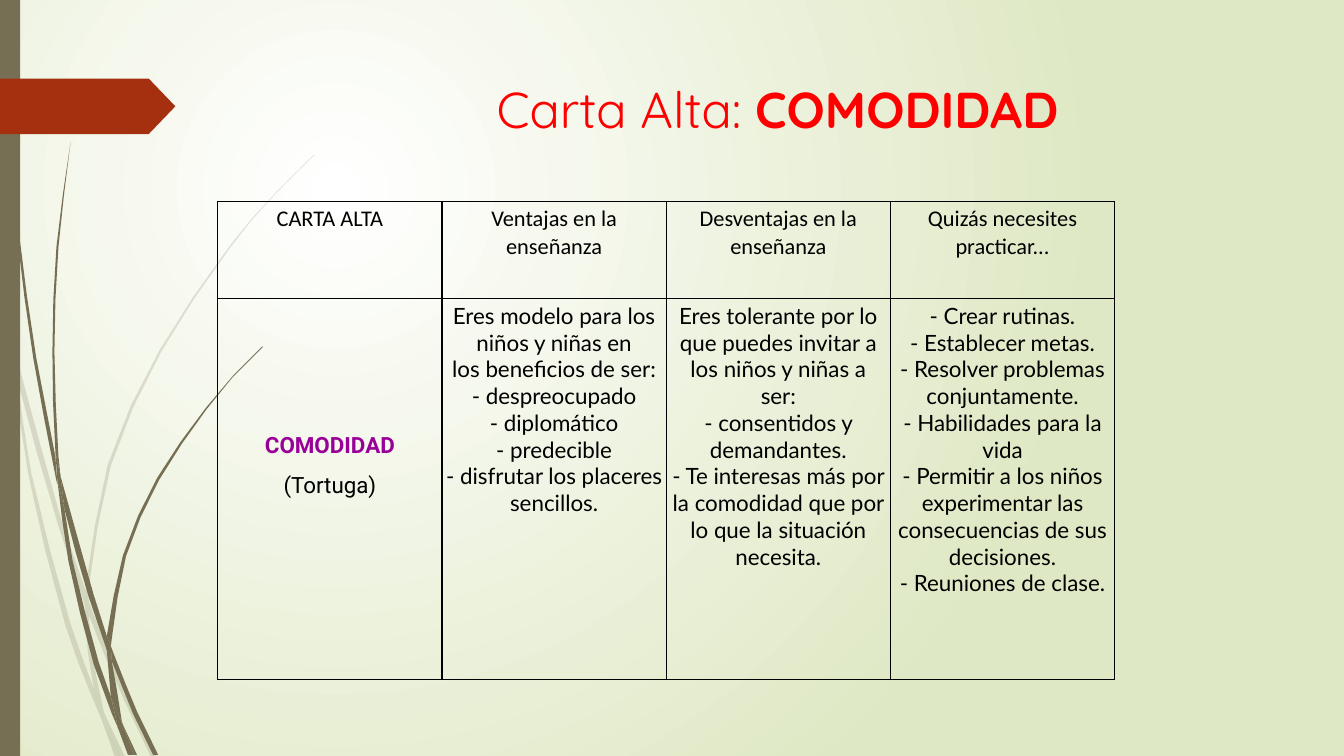
from dataclasses import dataclass
from math import hypot

from pptx import Presentation
from pptx.dml.color import RGBColor
from pptx.enum.shapes import MSO_SHAPE as Preset
from pptx.enum.text import MSO_ANCHOR as Anchor, PP_ALIGN as Align
from pptx.oxml import parse_xml
from pptx.oxml.ns import nsdecls, qn
from pptx.util import Cm, Pt


@dataclass(frozen=True)
class Theme:
    stem: str = "766F54"
    arrow: str = "A53010"
    title: str = "FF0000"
    accent: str = "990099"
    text: str = "000000"
    glow: str = "FFFFFF"
    edge: str = "DFE8C4"
    title_font: str = "Quicksand"
    header_font: str = "Calibri"
    card_font: str = "Roboto"
    body_font: str = "Lato"
    title_size: float = 36
    table_size: float = 16


THEME = Theme()
GRASS_UNIT = 0.0254  # grass points are in hundredths of an inch, here in cm

# Corner points of each grass blade, x and y in turn
PALE_GRASS = [
    (11, 350, 9, 322, 0, 282, 0, 299, 10, 344),
    (58, 522, 84, 599, 85, 586, 62, 520, 14, 345, 17, 376),
    (92, 607, 88, 596, 88, 610, 123, 694, 150, 751, 155, 751, 127, 692),
    (119, 751, 124, 751, 105, 711),
    (93, 683, 70, 619, 31, 469, 17, 376, 11, 350, 28, 470, 65, 621, 92, 693,
     101, 714, 99, 707),
    (84, 599, 87, 646, 93, 683, 96, 692, 105, 711, 103, 706, 91, 646, 88, 610),
    (88, 584, 110, 462, 160, 349, 229, 245, 268, 198, 312, 154, 312, 153,
     268, 197, 228, 244, 158, 348, 107, 461, 85, 584, 85, 586, 88, 596),
    (101, 714, 114, 751, 119, 751),
    (88, 610, 88, 596, 85, 586, 84, 599),
    (96, 692, 93, 683, 99, 707, 101, 714, 119, 751, 105, 711),
]
DARK_GRASS = [
    (7, 110, 17, 233, 33, 355, 56, 477, 57, 481, 55, 453, 36, 355, 19, 232,
     8, 109, 4, 0, 3, 0),
    (88, 592, 106, 645, 106, 631, 93, 590, 60, 472, 64, 505),
    (113, 649, 110, 641, 111, 656, 132, 708, 152, 749, 157, 749, 136, 706),
    (110, 691, 98, 657, 72, 556, 64, 505, 57, 477, 68, 557, 93, 659, 111, 708,
     117, 722, 116, 717),
    (60, 472, 58, 453, 54, 349, 58, 245, 70, 141, 56, 245, 52, 349, 55, 449),
    (133, 749, 136, 749, 122, 719),
    (57, 477, 64, 505, 60, 472, 55, 449),
    (111, 633, 125, 552, 158, 476, 205, 406, 231, 374, 261, 344, 260, 344,
     231, 373, 204, 405, 156, 474, 122, 551, 106, 631, 110, 641),
    (117, 722, 127, 749, 131, 749),
    (106, 645, 110, 691, 116, 706, 122, 719, 121, 716, 111, 656),
    (106, 645, 111, 656, 110, 641, 106, 631),
    (116, 706, 110, 691, 116, 717, 117, 722, 130, 749, 133, 749, 122, 719),
]

HEADERS = ["CARTA ALTA", "Ventajas en la enseñanza", "Desventajas en la enseñanza",
           "Quizás necesites practicar..."]
CARD = ["COMODIDAD", "(Tortuga)"]
DETAILS = [
    ["Eres modelo para los niños y niñas en", "los beneficios de ser:",
     "- despreocupado", "- diplomático", "- predecible",
     "- disfrutar los placeres sencillos."],
    ["Eres tolerante por lo que puedes invitar a los niños y niñas a ser:",
     "- consentidos y demandantes.",
     "- Te interesas más por la comodidad que por lo que la situación necesita."],
    ["- Crear rutinas.", "- Establecer metas.", "- Resolver problemas conjuntamente.",
     "- Habilidades para la vida",
     "- Permitir a los niños experimentar las consecuencias de sus decisiones.",
     "- Reuniones de clase."],
]


def set_font(font, name, size, color, bold=False):
    font.name, font.size, font.bold = name, Pt(size), bold
    font.color.rgb = RGBColor.from_string(color)


def paint(shape, color):
    shape.shadow.inherit = False
    shape.fill.solid()
    shape.fill.fore_color.rgb = RGBColor.from_string(color)
    shape.line.fill.background()


def direction(start, end):
    dx, dy = end[0] - start[0], end[1] - start[1]
    length = hypot(dx, dy) or 1
    return dx / length, dy / length


def smooth_outline(corners):
    """Bend the long edges of a closed outline, keeping sharp tips sharp."""
    count, outline = len(corners), []
    for i, start in enumerate(corners):
        before, end, after = (corners[(i + k) % count] for k in (-1, 1, 2))
        along = direction(start, end)

        def tangent(first, last, neighbour):
            bend = along[0] * neighbour[0] + along[1] * neighbour[1]
            return direction(first, last) if bend > 0.9 else along

        leave = tangent(before, end, direction(before, start))
        arrive = tangent(start, after, direction(end, after))
        reach = hypot(end[0] - start[0], end[1] - start[1])
        steps = 2 if reach > 60 else 1
        for step in range(steps):
            t = step / steps
            ease = t * t * (3 - 2 * t)
            pull_out, pull_in = reach * t * (1 - t) ** 2, reach * t * t * (t - 1)
            outline.append(tuple(
                start[axis] + (end[axis] - start[axis]) * ease
                + leave[axis] * pull_out + arrive[axis] * pull_in for axis in (0, 1)))
    return outline


def add_background(slide):
    slide.element.cSld.insert(0, parse_xml(
        f'<p:bg {nsdecls("p", "a")}><p:bgPr><a:gradFill rotWithShape="1"><a:gsLst>'
        f'<a:gs pos="0"><a:srgbClr val="{THEME.glow}"/></a:gs>'
        f'<a:gs pos="100000"><a:srgbClr val="{THEME.edge}"/></a:gs></a:gsLst>'
        '<a:path path="circle"><a:fillToRect l="50000" t="50000" r="100000" b="100000"/>'
        '</a:path></a:gradFill><a:effectLst/></p:bgPr></p:bg>'))


def add_grass(slide, blades, left, top, opacity=100):
    tuft = slide.shapes.add_group_shape()
    for blade in blades:
        corners = list(zip(blade[::2], blade[1::2]))
        points = [(left + Cm(x * GRASS_UNIT), top + Cm(y * GRASS_UNIT))
                  for x, y in smooth_outline(corners)]
        builder = tuft.shapes.build_freeform(*points[0], scale=1.0)
        builder.add_line_segments(points[1:], close=True)
        shape = builder.convert_to_shape()
        paint(shape, THEME.stem)
        if opacity < 100:
            color = shape.element.spPr.find(qn("a:solidFill"))[0]
            color.append(parse_xml(
                f'<a:alpha {nsdecls("a")} val="{opacity * 1000}"/>'))


def add_margin(slide, left, top, height):
    bar = slide.shapes.add_shape(Preset.RECTANGLE, left, top, Cm(0.51), height)
    paint(bar, THEME.stem)
    arrow = slide.shapes.add_shape(
        Preset.PENTAGON, left, top + Cm(1.98), Cm(4.42), Cm(1.4))
    arrow.adjustments[0] = 0.48
    paint(arrow, THEME.arrow)


def add_title(slide, left, top, width, height):
    title = slide.shapes.title
    title.left, title.top, title.width, title.height = left, top, width, height
    title.text_frame.vertical_anchor = Anchor.MIDDLE
    paragraph = title.text_frame.paragraphs[0]
    paragraph.alignment = Align.CENTER
    set_font(paragraph.font, THEME.title_font, THEME.title_size, THEME.title)
    paragraph.add_run().text = "Carta Alta: "
    name = paragraph.add_run()
    name.text, name.font.bold = "COMODIDAD", True


def fill_cell(cell, lines, font_name):
    cell.margin_left = cell.margin_right = cell.margin_top = cell.margin_bottom = Cm(0.1)
    cell.fill.background()
    for i, side in enumerate(("lnL", "lnR", "lnT", "lnB")):
        cell._tc.get_or_add_tcPr().insert(i, parse_xml(
            f'<a:{side} {nsdecls("a")} w="12700"><a:solidFill>'
            f'<a:srgbClr val="{THEME.text}"/></a:solidFill></a:{side}>'))
    cell.text = "\n".join(lines)
    for paragraph in cell.text_frame.paragraphs:
        paragraph.alignment = Align.CENTER
        set_font(paragraph.font, font_name, THEME.table_size, THEME.text)


def add_card_table(slide, left, top, width, height):
    header_height = Cm(2.44)
    table = slide.shapes.add_table(2, len(HEADERS), left, top, width, height).table
    table.first_row = table.horz_banding = False
    table.rows[0].height, table.rows[1].height = header_height, height - header_height
    for column, (header, lines) in enumerate(zip(HEADERS, [CARD] + DETAILS)):
        fill_cell(table.cell(0, column), [header], THEME.header_font)
        fill_cell(table.cell(1, column), lines,
                  THEME.body_font if column else THEME.card_font)

    # Card name, lowered within its cell
    card = table.cell(1, 0)
    card.margin_top = Cm(3.07)
    for paragraph in card.text_frame.paragraphs:
        paragraph.line_spacing = 1.5
    set_font(card.text_frame.paragraphs[0].font, THEME.card_font, THEME.table_size,
             THEME.accent, bold=True)


def main():
    presentation = Presentation()
    presentation.slide_width, presentation.slide_height = Cm(33.87), Cm(19.05)
    slide = presentation.slides.add_slide(presentation.slide_layouts.get_by_name("Title Only"))
    add_background(slide)
    add_grass(slide, PALE_GRASS, Cm(0), Cm(0), opacity=20)
    add_grass(slide, DARK_GRASS, Cm(0), Cm(0))
    add_margin(slide, Cm(0), Cm(0), presentation.slide_height)
    add_title(slide, Cm(7.21), Cm(1.73), Cm(24.77), Cm(1.98))
    add_card_table(slide, Cm(5.49), Cm(5.08), Cm(22.6), Cm(12.04))
    presentation.save("out.pptx")


if __name__ == "__main__":
    main()
